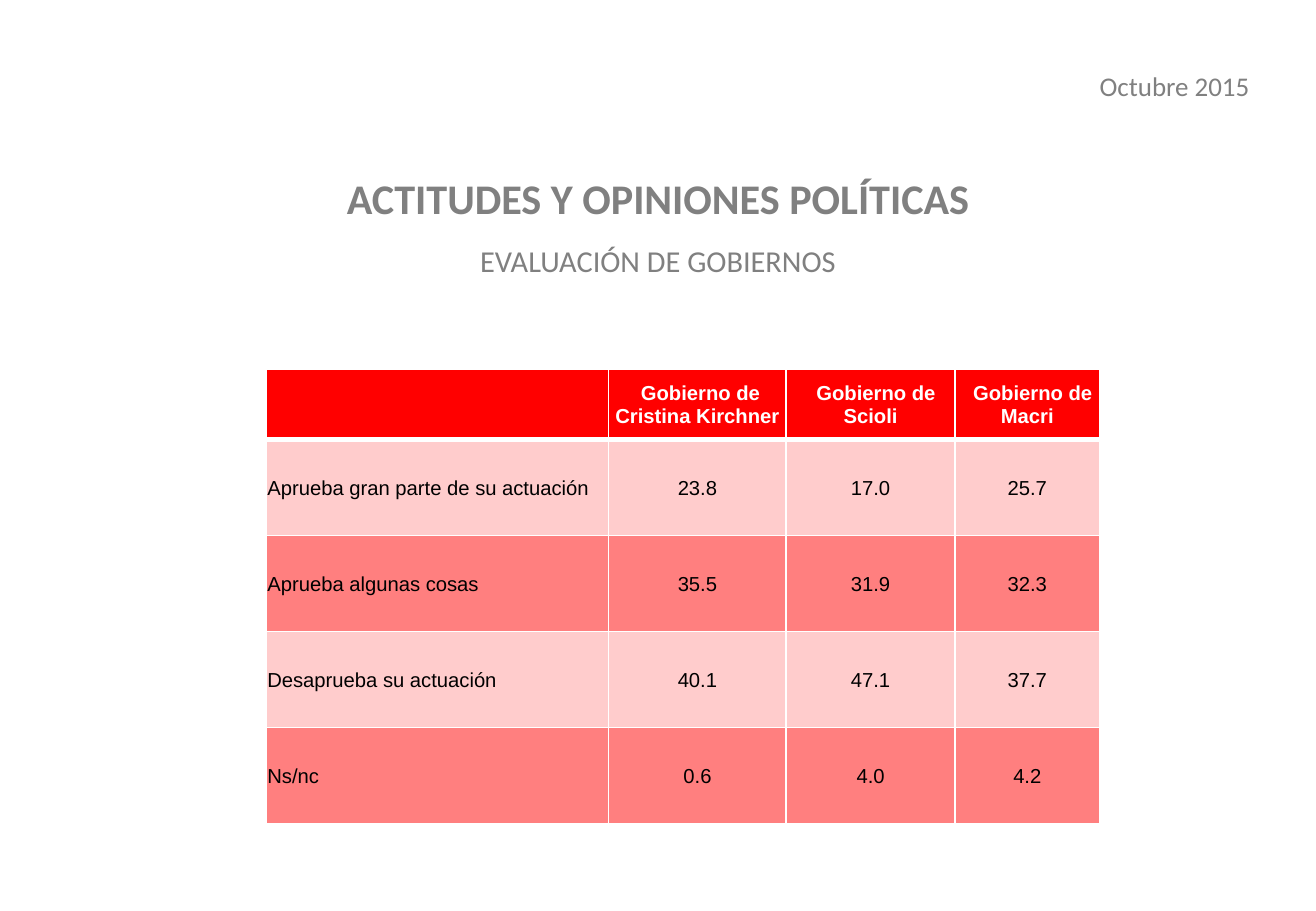
from typing import NamedTuple

from lxml import etree
from pptx import Presentation
from pptx.dml.color import RGBColor
from pptx.enum.text import MSO_ANCHOR, MSO_AUTO_SIZE, PP_ALIGN
from pptx.oxml.ns import qn
from pptx.util import Pt

PX = 9144
LEFT, CENTER, RIGHT = PP_ALIGN.LEFT, PP_ALIGN.CENTER, PP_ALIGN.RIGHT
TOP, MIDDLE = MSO_ANCHOR.TOP, MSO_ANCHOR.MIDDLE
FIXED_SIZE = MSO_AUTO_SIZE.NONE
TITLE_ONLY = 5

GRAY = RGBColor(0x80, 0x80, 0x80)
RED = RGBColor(0xFF, 0x00, 0x00)
WHITE = RGBColor(0xFF, 0xFF, 0xFF)
BLACK = RGBColor(0x00, 0x00, 0x00)


class Style(NamedTuple):
    size: int
    font: str
    color: RGBColor
    bold: bool = False
    align: PP_ALIGN = CENTER


class Government(NamedTuple):
    header: str
    indent: int
    width: int
    values: tuple[str, ...]


TITLE = Style(25, "Calibri", GRAY, bold=True)
SUBTITLE = Style(18, "Calibri", GRAY)
DATE = Style(16, "Calibri", GRAY, align=RIGHT)
HEADER = Style(12, "Arial", WHITE, bold=True)
LABEL = Style(12, "Arial", BLACK, align=LEFT)
VALUE = Style(12, "Arial", BLACK)

ANSWERS = ("Aprueba gran parte de su actuación", "Aprueba algunas cosas",
           "Desaprueba su actuación", "Ns/nc")
GOVERNMENTS = (
    Government("Gobierno de Cristina Kirchner", 5, 146, ("23.8", "35.5", "40.1", "0.6")),
    Government("Gobierno de Scioli", 9, 139, ("17.0", "31.9", "47.1", "4.0")),
    Government("Gobierno de Macri", 9, 119, ("25.7", "32.3", "37.7", "4.2")),
)
LABEL_WIDTH, HEADER_HEIGHT, ANSWER_HEIGHT = 282, 58, 79
BAND_ALPHAS = (20, 50)


def place(shape, left: int, top: int, width: int, height: int) -> None:
    """Set the position and size of a shape in px."""
    shape.left, shape.top = left * PX, top * PX
    shape.width, shape.height = width * PX, height * PX


def format_para(para, style: Style) -> None:
    """Apply a text style to a paragraph and its runs."""
    para.alignment = style.align
    for span in para.runs:
        span.font.size = Pt(style.size)
        span.font.name = style.font
        span.font.bold = style.bold
        span.font.color.rgb = style.color


def add_border(cell, side: str, points: int) -> None:
    """Draw a white border on one side of a cell."""
    line = etree.SubElement(cell._tc.get_or_add_tcPr(), qn(f"a:ln{side}"), w=str(Pt(points)))
    fill = etree.SubElement(line, qn("a:solidFill"))
    etree.SubElement(fill, qn("a:srgbClr"), val=str(WHITE))


def fill_cell(cell, text: str, style: Style, row: int, indent: int = 0) -> None:
    """Write a cell and give it its borders and row colour."""
    for side in "LRTB":
        under_header = (row, side) in ((0, "B"), (1, "T"))
        add_border(cell, side, 3 if under_header else 1)
    cell.fill.solid()
    cell.fill.fore_color.rgb = RED
    if row:
        color = cell._tc.tcPr.find(f"{qn('a:solidFill')}/{qn('a:srgbClr')}")
        alpha = BAND_ALPHAS[(row - 1) % len(BAND_ALPHAS)]
        etree.SubElement(color, qn("a:alpha"), val=str(alpha * 1000))
    cell.margin_left = cell.margin_right = cell.margin_top = PX
    cell.margin_bottom = 0
    cell.vertical_anchor = MIDDLE
    cell.text_frame.text = text
    para = cell.text_frame.paragraphs[0]
    format_para(para, style)
    if indent:
        para._p.get_or_add_pPr().set("indent", str(indent * PX))


def add_headings(page) -> None:
    """Write the title with its subtitle, and the date."""
    title = page.shapes.title
    place(title, 0, 149, 1083, 164)
    frame = title.text_frame
    frame.auto_size = FIXED_SIZE
    frame.word_wrap = True
    frame.vertical_anchor = TOP
    frame.margin_top = PX
    frame.text = "ACTITUDES Y OPINIONES POLÍTICAS\nEVALUACIÓN DE GOBIERNOS"
    for para, style, space in zip(frame.paragraphs, (TITLE, SUBTITLE), (0, 16)):
        para.line_spacing = 0.8
        para.space_before = Pt(space)
        format_para(para, style)

    date = page.shapes.add_textbox(0, 0, 0, 0)
    place(date, 857, 52, 181, 37)
    date.text_frame.word_wrap = True
    date.text_frame.text = "Octubre 2015"
    format_para(date.text_frame.paragraphs[0], DATE)


def add_approval_table(page) -> None:
    """Draw the table of answers by government."""
    widths = [LABEL_WIDTH, *(government.width for government in GOVERNMENTS)]
    heights = [HEADER_HEIGHT] + [ANSWER_HEIGHT] * len(ANSWERS)
    table = page.shapes.add_table(len(heights), len(widths), 219 * PX, 304 * PX,
                                  sum(widths) * PX, sum(heights) * PX).table
    for column, width in zip(table.columns, widths):
        column.width = width * PX
    for row, height in zip(table.rows, heights):
        row.height = height * PX

    for row, answer in enumerate(("", *ANSWERS)):
        fill_cell(table.cell(row, 0), answer, LABEL, row)
    for column, government in enumerate(GOVERNMENTS, 1):
        fill_cell(table.cell(0, column), government.header, HEADER, 0, government.indent)
        for row, value in enumerate(government.values, 1):
            fill_cell(table.cell(row, column), value, VALUE, row)


def main() -> None:
    """Build and save the slide."""
    deck = Presentation()
    deck.slide_width, deck.slide_height = 1083 * PX, 750 * PX
    page = deck.slides.add_slide(deck.slide_layouts[TITLE_ONLY])
    add_headings(page)
    add_approval_table(page)
    deck.save("out.pptx")


if __name__ == "__main__":
    main()
